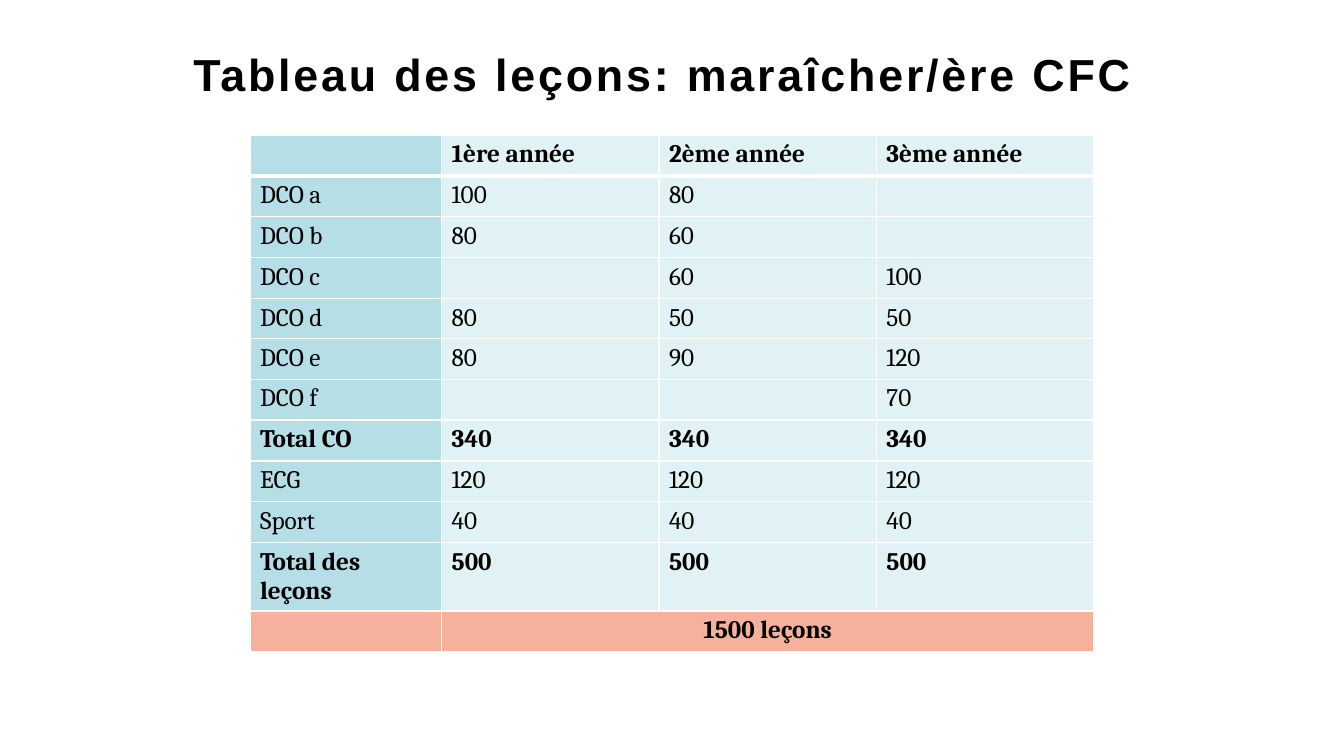
"""Build the slide with the lesson table for the market gardener course."""
from lxml import etree
from pptx import Presentation
from pptx.dml.color import RGBColor
from pptx.enum import text
from pptx.oxml import ns
from pptx.util import Pt

TITLE = "Tableau des leçons: maraîcher/ère CFC"
LESSONS = [
    ("", "1ère année", "2ème année", "3ème année"),
    ("DCO a", "100", "80", ""),
    ("DCO b", "80", "60", ""),
    ("DCO c", "", "60", "100"),
    ("DCO d", "80", "50", "50"),
    ("DCO e", "80", "90", "120"),
    ("DCO f", "", "", "70"),
    ("Total CO", "340", "340", "340"),
    ("ECG", "120", "120", "120"),
    ("Sport", "40", "40", "40"),
    ("Total des leçons", "500", "500", "500"),
    ("", "1500 leçons", "", ""),
]
HEADER, GRAND_TOTAL = 0, len(LESSONS) - 1
BOLD_ROWS = {HEADER, 7, 10, GRAND_TOTAL}
COLUMN_WIDTHS = [136.8, 155.3, 155.3, 155.3]
ROW_HEIGHT = 29.2
SPECIAL_HEIGHTS = {4: 28.4, 10: 48.6}

BLACK = RGBColor(0x00, 0x00, 0x00)
WHITE = RGBColor(0xFF, 0xFF, 0xFF)
LABEL_BLUE = RGBColor(0xB5, 0xDE, 0xE7)
VALUE_BLUE = RGBColor(0xE1, 0xF2, 0xF5)
SALMON = RGBColor(0xF5, 0xB1, 0x9B)


def style_font(font, name, size, bold):
    font.name, font.size, font.bold = name, Pt(size), bold
    font.color.rgb = BLACK


def add_title(page):
    title = page.shapes.title
    title.left, title.top, title.width, title.height = Pt(138.2), Pt(19.4), Pt(683.3), Pt(58.3)
    frame = title.text_frame
    frame.text = TITLE
    frame.vertical_anchor = text.MSO_ANCHOR.BOTTOM
    frame.auto_size = text.MSO_AUTO_SIZE.NONE
    frame.margin_left = frame.margin_right = 0
    frame.margin_top = frame.margin_bottom = Pt(5.76)
    para = frame.paragraphs[0]
    para.alignment = text.PP_ALIGN.LEFT
    style_font(para.font, "Arial", 32, True)
    para.runs[0].font._element.set("spc", "200")


def add_borders(cell, widths):
    properties = cell._tc.get_or_add_tcPr()
    for position, (side, width) in enumerate(widths.items()):
        line = etree.Element(ns.qn(f"a:ln{side}"), w=str(Pt(width)))
        fill = etree.SubElement(line, ns.qn("a:solidFill"))
        etree.SubElement(fill, ns.qn("a:srgbClr"), val=str(WHITE))
        properties.insert(position, line)


def fill_color(row, column):
    if row == GRAND_TOTAL:
        return SALMON
    return VALUE_BLUE if column else LABEL_BLUE


def add_lessons(page):
    heights = [SPECIAL_HEIGHTS.get(row, ROW_HEIGHT) for row in range(len(LESSONS))]
    table = page.shapes.add_table(
        len(LESSONS), len(COLUMN_WIDTHS), Pt(178.6), Pt(96.5),
        Pt(sum(COLUMN_WIDTHS)), Pt(sum(heights))).table
    table.first_row = table.horz_banding = False
    for column, width in zip(table.columns, COLUMN_WIDTHS):
        column.width = Pt(width)
    for row, (height, values) in enumerate(zip(heights, LESSONS)):
        table.rows[row].height = Pt(height)
        for column, value in enumerate(values):
            cell = table.cell(row, column)
            cell.text = value
            cell.fill.solid()
            cell.fill.fore_color.rgb = fill_color(row, column)
            style_font(cell.text_frame.paragraphs[0].font, "Cambria", 18, row in BOLD_ROWS)
            top = 3 if row == HEADER + 1 else 1
            bottom = 3 if row == HEADER else 1
            add_borders(cell, {"L": 1, "R": 1, "T": top, "B": bottom})
    total = table.cell(GRAND_TOTAL, 1)
    total.merge(table.cell(GRAND_TOTAL, 3))
    total.text_frame.paragraphs[0].alignment = text.PP_ALIGN.CENTER


def main():
    deck = Presentation()
    deck.slide_width, deck.slide_height = Pt(960), Pt(540)
    page = deck.slides.add_slide(deck.slide_layouts[5])
    add_title(page)
    add_lessons(page)
    deck.save("out.pptx")


if __name__ == "__main__":
    main()
